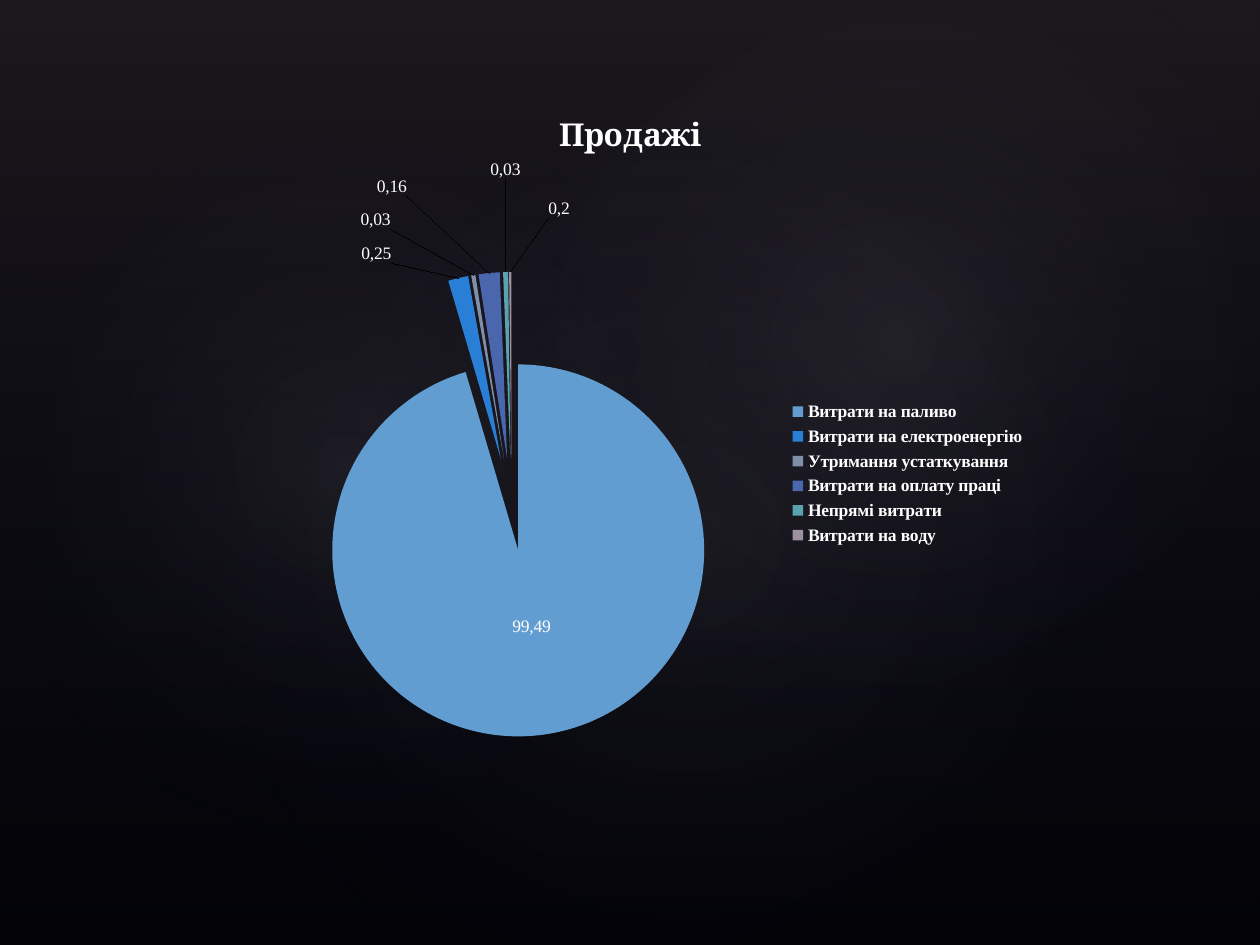
import pptx
import pptx.chart.data
import pptx.dml.color
import pptx.enum.chart
import pptx.enum.shapes
import pptx.oxml
import pptx.oxml.ns
import pptx.util

PX = 914400 / 126
NS = pptx.oxml.ns.nsdecls("a", "c")
THEME = {
    "back": "000000", "text": "FFFFFF", "dusk": "504652", "navy": "242852", "glow": "C4BCC6",
    "slices": ["629DD1", "297FD5", "7F8FA9", "4A66AC", "5AA2AE", "9D90A0"],
    "title_font": "Cambria", "label_font": "Times New Roman", "title": 18, "label": 10,
}
# Category, value, label, label shift as a share of the chart box
COSTS = [
    ("Витрати на паливо", 95.53, "99,49", (0, -0.02)),
    ("Витрати на електроенергію", 1.75, "0,25", (-0.08, -0.01)),
    ("Утримання устаткування", 0.36, "0,03", (-0.1, -0.05)),
    ("Витрати на оплату праці", 1.83, "0,16", (-0.1, -0.09)),
    ("Непрямі витрати", 0.44, "0,03", (0, -0.11)),
    ("Витрати на воду", 0.19, "0,2", (0.06, -0.06)),
]


def emu(*lengths):
    return [pptx.util.Emu(round(v * PX)) for v in lengths]


def rgb(name):
    return pptx.dml.color.RGBColor.from_string(THEME.get(name, name))


def set_font(font, **values):
    font.color.rgb = rgb("text")
    for name, value in values.items():
        setattr(font, name, value)


def add_gradient_shape(slide, kind, box, stops, direction, rotation=0):
    s = slide.shapes.add_shape(kind, *emu(*box))
    s.rotation = rotation
    s.shadow.inherit = False
    s.line.fill.background()
    stop_xml = "".join(
        f'<a:gs pos="{pos * 1000}"><a:srgbClr val="{THEME[color]}">'
        f'<a:alpha val="{alpha * 1000}"/></a:srgbClr></a:gs>' for pos, color, alpha in stops)
    fill = pptx.oxml.parse_xml(
        f'<a:gradFill {NS} rotWithShape="1"><a:gsLst>{stop_xml}</a:gsLst>{direction}</a:gradFill>')
    sp_pr = s.fill._xPr
    sp_pr.insert(list(sp_pr).index(sp_pr.find(pptx.oxml.ns.qn("a:prstGeom"))) + 1, fill)


def add_backdrop(slide, box):
    x, y, w, h = box
    shapes = pptx.enum.shapes.MSO_SHAPE
    slide.background.fill.solid()
    slide.background.fill.fore_color.rgb = rgb("back")
    # Vertical wash
    add_gradient_shape(slide, shapes.RECTANGLE, box, [(0, "dusk", 36), (100, "navy", 10)],
                       '<a:lin ang="5400000" scaled="0"/>')
    # Soft round glows
    radial = '<a:path path="circle"><a:fillToRect l="50000" t="50000" r="50000" b="50000"/></a:path>'
    for dx, dy, gw, gh, turn, alpha in [(189, 144, 998, 786, 328.7, 7),
                                        (-38, 161, 764, 617, 294.3, 8),
                                        (451, 16, 893, 655, 328.7, 8)]:
        add_gradient_shape(slide, shapes.OVAL, (x + dx, y + dy, gw, gh),
                           [(0, "glow", alpha), (58, "navy", 0)], radial, turn)


def manual_layout(x, y, extra=""):
    return pptx.oxml.parse_xml(
        f'<c:layout {NS}><c:manualLayout>{extra}<c:x val="{x}"/><c:y val="{y}"/>'
        '</c:manualLayout></c:layout>')


def add_cost_pie(slide, box):
    names, values, labels, shifts = zip(*COSTS)
    data = pptx.chart.data.CategoryChartData()
    data.categories = names
    data.add_series("Продажі", values)
    enums = pptx.enum.chart
    chart = slide.shapes.add_chart(enums.XL_CHART_TYPE.PIE, *emu(*box), data).chart
    label_style = {"name": THEME["label_font"], "size": pptx.util.Pt(THEME["label"])}
    set_font(chart.font, **label_style)

    # Title and legend
    chart.has_title = True
    tf = chart.chart_title.text_frame
    tf.text = "Продажі"
    set_font(tf.paragraphs[0].runs[0].font, name=THEME["title_font"],
             size=pptx.util.Pt(THEME["title"]), bold=True)
    chart.has_legend = True
    chart.legend.position = enums.XL_LEGEND_POSITION.RIGHT
    chart.legend.include_in_layout = False
    set_font(chart.legend.font, bold=True, **label_style)

    # Plot area
    plot = chart.plots[0]
    plot.vary_by_categories = True
    area = plot._element.getparent()
    for old in area.findall(pptx.oxml.ns.qn("c:layout")):
        area.remove(old)
    layout = manual_layout(0.07, 0.24, '<c:layoutTarget val="inner"/>'
                           '<c:xMode val="edge"/><c:yMode val="edge"/>')
    for tag, size in (("w", 0.57), ("h", 0.6)):
        layout[0].append(pptx.oxml.parse_xml(f'<c:{tag} {NS} val="{size}"/>'))
    area.insert(0, layout)

    # Slices pulled apart, each with its own label
    series = plot.series[0]
    series._element.find(pptx.oxml.ns.qn("c:tx")).addnext(
        pptx.oxml.parse_xml(f'<c:explosion {NS} val="25"/>'))
    series.data_labels.show_value = True
    set_font(series.data_labels.font, **label_style)
    places = enums.XL_LABEL_POSITION
    for i, (label, shift) in enumerate(zip(labels, shifts)):
        point = series.points[i]
        point.format.fill.solid()
        point.format.fill.fore_color.rgb = rgb(THEME["slices"][i])
        tag = point.data_label
        tag.text_frame.text = label
        set_font(tag.text_frame.paragraphs[0].runs[0].font, bold=False, **label_style)
        tag.position = places.OUTSIDE_END if i else places.CENTER
        tag._dLbl.insert(1, manual_layout(*shift))

    # Leader lines
    d_lbls = series.data_labels._element
    for old in d_lbls.findall(pptx.oxml.ns.qn("c:showLeaderLines")):
        d_lbls.remove(old)
    d_lbls.append(pptx.oxml.parse_xml(f'<c:showLeaderLines {NS} val="1"/>'))


def main():
    prs = pptx.Presentation()
    prs.slide_width, prs.slide_height = emu(1260, 945)
    slide = prs.slides.add_slide(prs.slide_layouts[6])
    add_backdrop(slide, (0, 0, 1260, 945))
    add_cost_pie(slide, (222, 86, 816, 775))
    prs.save("out.pptx")


if __name__ == "__main__":
    main()
